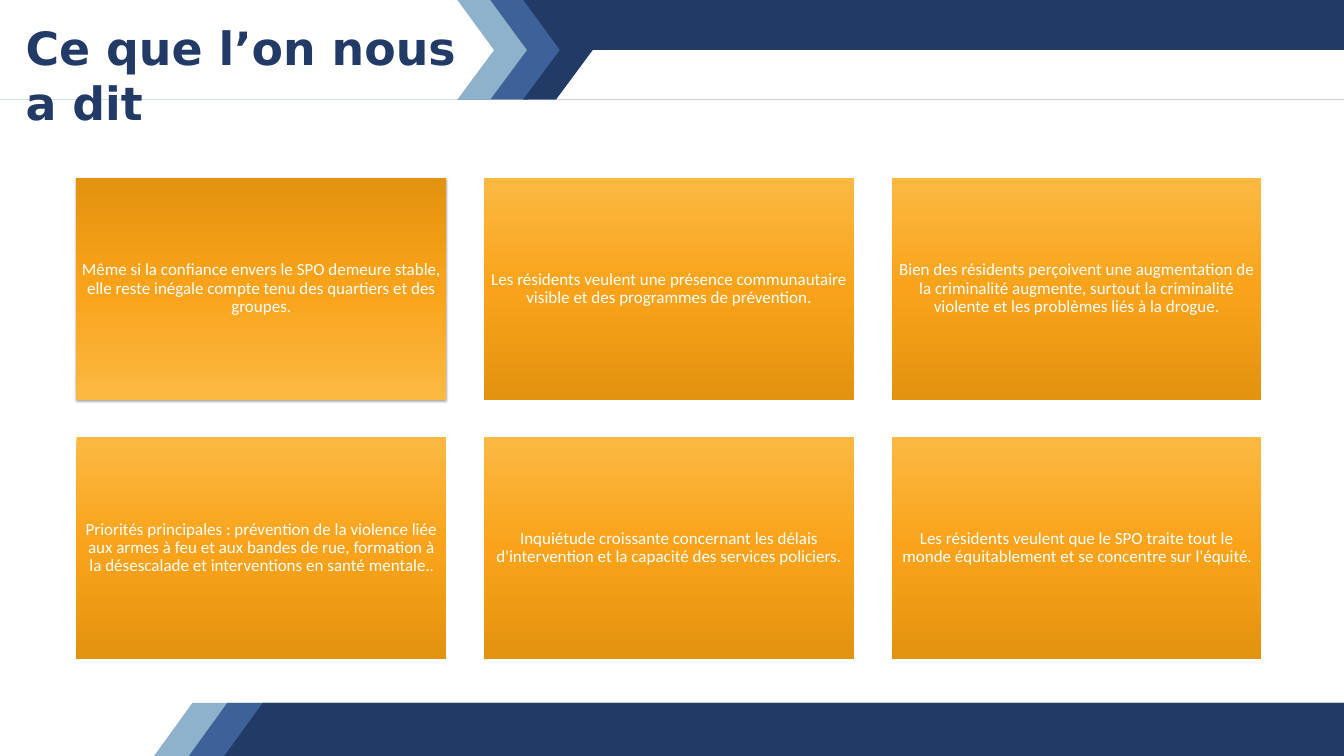
from dataclasses import dataclass

from lxml import etree
from pptx import Presentation
from pptx import util as u
from pptx.dml.color import RGBColor
from pptx.enum import shapes, text
from pptx.oxml import ns

PX = 9144


@dataclass(frozen=True)
class Theme:
    navy: str = "223A66"
    blue: str = "3D6299"
    sky: str = "8FB2CC"
    white: str = "FFFFFF"
    orange: tuple[str, ...] = ("FBB942", "FAA31A", "E2930F")
    title_font: str = "DejaVu Sans"
    body_font: str = "Calibri"
    stop_font: str = "Karla"
    title_size: int = 54
    body_size: int = 20


@dataclass(frozen=True)
class Band:
    top: int
    bottom: int
    top_left: int
    top_right: int
    bottom_right: int
    bottom_left: int
    color: str


@dataclass(frozen=True)
class Card:
    message: str
    final_stop: str = ""
    inset: int = 10
    highlighted: bool = False


THEME = Theme()
WIDTH, HEIGHT = 2199, 1237
FOOTER_TOP = 1150
HEADER_MIDDLE, HEADER_BOTTOM = 82, 163
SLANT = 60
CARD_WIDTH, CARD_HEIGHT = 605, 363
CARD_LEFT, CARD_TOP = 125, 291
COLUMN_STEP, ROW_STEP = 667, 424
COLUMNS = 3

CARDS = [
    Card("Même si la confiance envers le SPO demeure stable, elle reste inégale "
         "compte tenu des quartiers et des groupes.", inset=8, highlighted=True),
    Card("Les résidents veulent une présence communautaire visible et des "
         "programmes de prévention."),
    Card("Bien des résidents perçoivent une augmentation de la criminalité augmente, "
         "surtout la criminalité violente et les problèmes liés à la drogue."),
    Card("Priorités principales : prévention de la violence liée aux armes à feu et "
         "aux bandes de rue, formation à la désescalade et interventions en santé "
         "mentale.", "."),
    Card("Inquiétude croissante concernant les délais d'intervention et la capacité "
         "des services policiers."),
    Card("Les résidents veulent que le SPO traite tout le monde équitablement et se "
         "concentre sur l'équité", "."),
]


def footer(left: int, color: str) -> Band:
    return Band(FOOTER_TOP, HEIGHT, left + 63, WIDTH, WIDTH, left, color)


def upper_left(right: int, color: str) -> Band:
    return Band(0, HEADER_MIDDLE, 0, right, right + SLANT, 0, color)


def lower_left(right: int, color: str) -> Band:
    return Band(HEADER_MIDDLE, HEADER_BOTTOM, 0, right + SLANT, right, 0, color)


def lower_right(left: int, color: str) -> Band:
    return Band(HEADER_MIDDLE, HEADER_BOTTOM, left + SLANT, WIDTH, WIDTH, left, color)


BANDS = [
    footer(252, THEME.sky),
    footer(309, THEME.blue),
    footer(367, THEME.navy),
    Band(0, HEADER_MIDDLE, 522, WIDTH, WIDTH, 581, THEME.navy),
    upper_left(856, THEME.blue),
    upper_left(802, THEME.sky),
    upper_left(748, THEME.white),
    lower_left(864, THEME.blue),
    lower_left(802, THEME.sky),
    lower_left(748, THEME.white),
    lower_right(856, THEME.navy),
    lower_right(910, THEME.white),
]


def apply(target, values: dict) -> None:
    for name, value in values.items():
        setattr(target, name, value)


def add_span(para, words: str, font: str, size: int, color: str, bold: bool = False) -> None:
    span = para.add_run()
    span.text = words
    apply(span.font, {"name": font, "size": u.Pt(size), "bold": bold})
    span.font.color.rgb = RGBColor.from_string(color)


def draw_band(page, band: Band) -> None:
    builder = page.shapes.build_freeform(band.top_left, band.top, scale=PX)
    builder.add_line_segments([
        (band.top_right, band.top),
        (band.bottom_right, band.bottom),
        (band.bottom_left, band.bottom),
    ], close=True)
    box = builder.convert_to_shape()
    box.shadow.inherit = False
    box.fill.solid()
    box.fill.fore_color.rgb = RGBColor.from_string(band.color)
    box.line.fill.background()


def fill_gradient(box, colors: tuple[str, ...], angle: int) -> None:
    box.fill.gradient()
    box.fill.gradient_angle = angle
    stops = box._element.spPr.find(".//" + ns.qn("a:gsLst"))
    for stop in list(stops):
        stops.remove(stop)
    for index, color in enumerate(colors):
        position = 100000 * index // (len(colors) - 1)
        stop = etree.SubElement(stops, ns.qn("a:gs"), pos=str(position))
        etree.SubElement(stop, ns.qn("a:srgbClr"), val=color)


def add_shadow(box) -> None:
    effects = box._element.spPr.find(ns.qn("a:effectLst"))
    shadow = etree.SubElement(effects, ns.qn("a:outerShdw"), blurRad="40000",
                              dist="23000", dir="5400000", rotWithShape="0")
    color = etree.SubElement(shadow, ns.qn("a:srgbClr"), val="000000")
    etree.SubElement(color, ns.qn("a:alpha"), val="35000")


def draw_card(page, card: Card, left: int, top: int) -> None:
    box = page.shapes.add_shape(shapes.MSO_SHAPE.RECTANGLE, left * PX, top * PX,
                                CARD_WIDTH * PX, CARD_HEIGHT * PX)
    box.shadow.inherit = False
    box.line.fill.background()
    fill_gradient(box, THEME.orange, 90 if card.highlighted else 270)
    if card.highlighted:
        add_shadow(box)
    inset = card.inset * PX
    apply(box.text_frame, {
        "word_wrap": True, "vertical_anchor": text.MSO_ANCHOR.MIDDLE,
        "margin_left": inset, "margin_right": inset,
        "margin_top": inset, "margin_bottom": inset,
    })
    para = box.text_frame.paragraphs[0]
    apply(para, {"alignment": text.PP_ALIGN.CENTER, "line_spacing": 0.9})
    add_span(para, card.message, THEME.body_font, THEME.body_size, THEME.white)
    if card.final_stop:
        add_span(para, card.final_stop, THEME.stop_font, THEME.body_size, THEME.white)


def draw_title(page, words: str) -> None:
    box = page.shapes.add_textbox(32 * PX, 27 * PX, 768 * PX, 110 * PX)
    apply(box.text_frame, {
        "word_wrap": True, "vertical_anchor": text.MSO_ANCHOR.TOP,
        "margin_left": 10 * PX, "margin_right": 10 * PX, "margin_top": 5 * PX,
    })
    add_span(box.text_frame.paragraphs[0], words, THEME.title_font,
             THEME.title_size, THEME.navy, bold=True)


def main() -> None:
    deck = Presentation()
    apply(deck, {"slide_width": WIDTH * PX, "slide_height": HEIGHT * PX})
    page = deck.slides.add_slide(deck.slide_layouts[6])
    for band in BANDS:
        draw_band(page, band)
    draw_title(page, "Ce que l’on nous a dit")
    for index, card in enumerate(CARDS):
        row, column = divmod(index, COLUMNS)
        draw_card(page, card, CARD_LEFT + column * COLUMN_STEP, CARD_TOP + row * ROW_STEP)
    deck.save("out.pptx")


if __name__ == "__main__":
    main()
